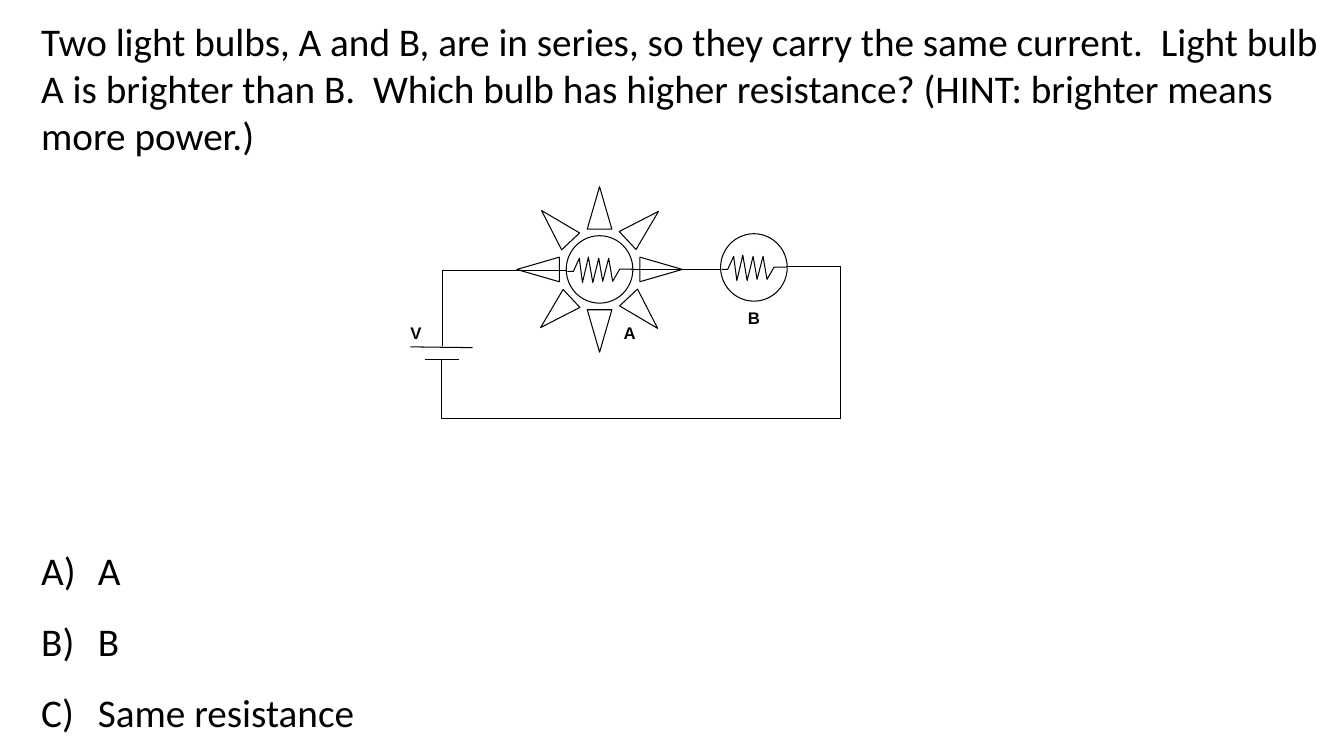
from dataclasses import dataclass
from math import cos, radians, sin

from lxml.etree import SubElement
from pptx import Presentation
from pptx.dml.color import RGBColor
from pptx.enum.shapes import MSO_CONNECTOR, MSO_SHAPE
from pptx.enum.text import MSO_ANCHOR, MSO_AUTO_SIZE as AutoSize
from pptx.oxml.ns import qn
from pptx.shapes.base import BaseShape
from pptx.slide import Slide
from pptx.util import Cm, Pt

COLORS = {"ink": "000000", "paper": "FFFFFF"}
LINE_WIDTH = Pt(0.75)

QUESTION = (
    "Two light bulbs, A and B, are in series, so they carry the same current.  "
    "Light bulb A is brighter than B.  Which bulb has higher resistance? "
    "(HINT: brighter means more power.)"
)
ANSWERS = ("A", "B", "Same resistance")
ANSWER_INDENT = Cm(1.43)

BULB_WIDTH, BULB_HEIGHT = 1.68, 1.70
FILAMENT_OFFSET = (0.03, 0.54)
FILAMENT = (
    (0, 0.36), (0.15, 0.36), (0.3, 0.03), (0.38, 0.64), (0.53, 0), (0.64, 0.64),
    (0.79, 0.03), (0.89, 0.61), (1.04, 0.03), (1.14, 0.61), (1.32, 0.3), (1.63, 0.3),
)
RAY_COUNT = 8
RAY_WIDTH, RAY_HEIGHT, RAY_RADIUS = 0.62, 1.07, 1.55
DIAGONAL_TILT = 1.7


@dataclass(frozen=True)
class Bulb:
    left: float
    top: float
    shining: bool = False


@dataclass(frozen=True)
class Wire:
    x1: float
    y1: float
    x2: float
    y2: float


@dataclass(frozen=True)
class Label:
    text: str
    left: float
    top: float
    fill: str | None = None


BULBS = (Bulb(14.27, 5.94, shining=True), Bulb(18.16, 5.89))
WIRES = (
    Wire(14.27, 6.81, 11.15, 6.81),
    Wire(15.9, 6.78, 18.16, 6.78),
    Wire(19.81, 6.71, 21.18, 6.71),
    Wire(11.15, 6.81, 11.15, 8.71),
    Wire(10.34, 8.74, 11.91, 8.76),  # long battery plate
    Wire(10.72, 9.07, 11.56, 9.07),  # short battery plate
    Wire(11.13, 9.07, 11.13, 10.57),
    Wire(21.18, 6.71, 21.18, 10.57),
    Wire(11.13, 10.54, 21.18, 10.54),
)
LABELS = (
    Label("V", 10.34, 8.13, "paper"),
    Label("A", 15.72, 8.13),
    Label("B", 18.85, 7.75, "paper"),
)


def color(name: str) -> RGBColor:
    return RGBColor.from_string(COLORS[name])


def outline(shape: BaseShape) -> None:
    """Leave the shape hollow with a thin line and no shadow."""
    shape.shadow.inherit = False
    shape.fill.background()
    shape.line.color.rgb = color("ink")
    shape.line.width = LINE_WIDTH


def add_text(slide: Slide, lines: tuple[str, ...], left: float, top: float,
             width: float, height: float, *, font: str = "Calibri", size: int = 28,
             bold: bool = False, wrap: bool = True, spacing: float = 1.0,
             inset: float | None = None, fill: str | None = None,
             lettered: bool = False, grow: bool = True) -> None:
    box = slide.shapes.add_textbox(Cm(left), Cm(top), Cm(width), Cm(height))
    if fill:
        box.fill.solid()
        box.fill.fore_color.rgb = color(fill)
    frame = box.text_frame
    frame.word_wrap = wrap
    frame.auto_size = AutoSize.SHAPE_TO_FIT_TEXT if grow else AutoSize.NONE
    frame.vertical_anchor = MSO_ANCHOR.TOP
    if inset is not None:
        frame.margin_left = frame.margin_right = Cm(inset)
        frame.margin_top = frame.margin_bottom = Cm(inset)
    for index, line in enumerate(lines):
        paragraph = frame.add_paragraph() if index else frame.paragraphs[0]
        paragraph.line_spacing = spacing
        run = paragraph.add_run()
        run.text = line
        run.font.name, run.font.size, run.font.bold = font, Pt(size), bold
        run.font.color.rgb = color("ink")
        if lettered:
            properties = paragraph._p.get_or_add_pPr()
            properties.set("marL", str(ANSWER_INDENT))
            properties.set("indent", str(-ANSWER_INDENT))
            SubElement(properties, qn("a:buFont"), typeface=font)
            SubElement(properties, qn("a:buAutoNum"), type="alphaUcParenR")


def add_rays(slide: Slide, center_x: float, center_y: float) -> None:
    for index in range(RAY_COUNT):
        angle = index * 360 / RAY_COUNT
        x = center_x + RAY_RADIUS * sin(radians(angle))
        y = center_y - RAY_RADIUS * cos(radians(angle))
        ray = slide.shapes.add_shape(
            MSO_SHAPE.ISOSCELES_TRIANGLE, Cm(x - RAY_WIDTH / 2),
            Cm(y - RAY_HEIGHT / 2), Cm(RAY_WIDTH), Cm(RAY_HEIGHT))
        ray.rotation = angle + (DIAGONAL_TILT if index % 2 else 0)
        outline(ray)


def add_bulb(slide: Slide, bulb: Bulb) -> None:
    glass = slide.shapes.add_shape(MSO_SHAPE.OVAL, Cm(bulb.left), Cm(bulb.top),
                                   Cm(BULB_WIDTH), Cm(BULB_HEIGHT))
    outline(glass)
    if bulb.shining:
        add_rays(slide, bulb.left + BULB_WIDTH / 2, bulb.top + BULB_HEIGHT / 2)
    left, top = bulb.left + FILAMENT_OFFSET[0], bulb.top + FILAMENT_OFFSET[1]
    points = [(Cm(left + x), Cm(top + y)) for x, y in FILAMENT]
    builder = slide.shapes.build_freeform(*points[0])
    builder.add_line_segments(points[1:], close=False)
    outline(builder.convert_to_shape())


def add_wire(slide: Slide, wire: Wire) -> None:
    connector = slide.shapes.add_connector(
        MSO_CONNECTOR.STRAIGHT, Cm(wire.x1), Cm(wire.y1), Cm(wire.x2), Cm(wire.y2))
    connector.line.color.rgb = color("ink")
    connector.line.width = LINE_WIDTH
    SubElement(connector._element.spPr, qn("a:effectLst"))


def main() -> None:
    presentation = Presentation()
    presentation.slide_width, presentation.slide_height = Cm(33.87), Cm(19.05)
    slide = presentation.slides.add_slide(presentation.slide_layouts[6])
    for bulb in BULBS:
        add_bulb(slide, bulb)
    for wire in WIRES:
        add_wire(slide, wire)
    for label in LABELS:
        add_text(slide, (label.text,), label.left, label.top, 0.56, 0.51, font="Arial",
                 size=12, bold=True, inset=0, fill=label.fill, grow=False)
    add_text(slide, (QUESTION,), 0.79, 0.3, 32.72, 3.84)
    add_text(slide, ANSWERS, 0.79, 13.06, 8.48, 5.64, wrap=False, spacing=1.5,
             lettered=True)
    presentation.save("out.pptx")


if __name__ == "__main__":
    main()
